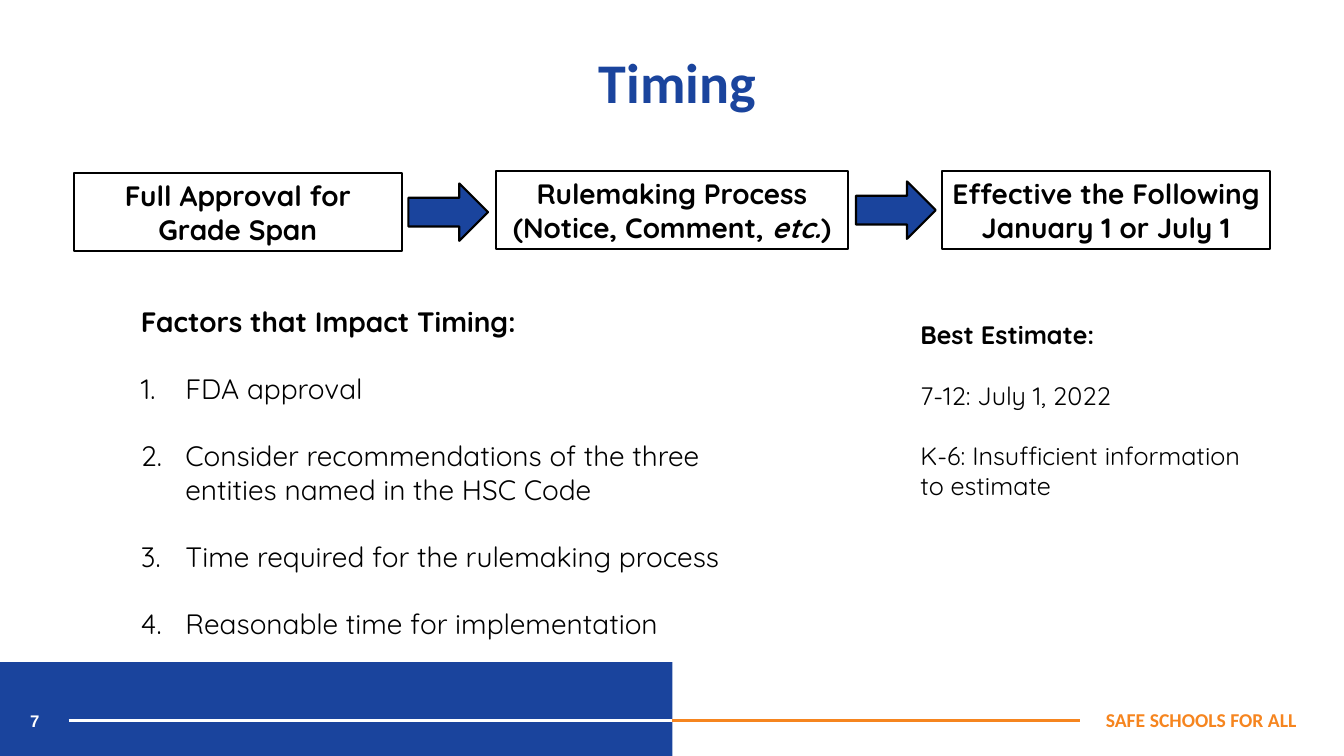
from lxml import etree
from pptx import Presentation
from pptx.dml.color import RGBColor
from pptx.enum import shapes, text
from pptx.oxml import ns
from pptx.util import Inches, Pt

BLUE = RGBColor(0x1A, 0x44, 0x9D)
ORANGE = RGBColor(0xF6, 0x85, 0x1F)
BLACK = RGBColor(0, 0, 0)
WHITE = RGBColor(255, 255, 255)
LEFT, CENTER, RIGHT = text.PP_ALIGN.LEFT, text.PP_ALIGN.CENTER, text.PP_ALIGN.RIGHT

deck = Presentation()
deck.slide_width, deck.slide_height = Inches(13.33), Inches(7.5)
page = deck.slides.add_slide(deck.slide_layouts[6])


def add_block(kind, left, top, width, height, fill=None, outline=None):
    block = page.shapes.add_shape(kind, Inches(left), Inches(top), Inches(width), Inches(height))
    block.shadow.inherit = False
    if fill is None:
        block.fill.background()
    else:
        block.fill.solid()
        block.fill.fore_color.rgb = fill
    if outline is None:
        block.line.fill.background()
    else:
        block.line.color.rgb = outline
        block.line.width = Pt(1.5)
    return block


def add_text(left, top, width, height, lines, size, font, color, align=LEFT, gap=0):
    """Add a text box whose first paragraph is bold; return its text frame."""
    box = page.shapes.add_textbox(Inches(left), Inches(top), Inches(width), Inches(height))
    frame = box.text_frame
    frame.word_wrap = True
    for index, line in enumerate(lines):
        para = frame.paragraphs[0] if index == 0 else frame.add_paragraph()
        para.text = line
        para.alignment = align
        para.space_before = Pt(gap if index else 0)
        para.font.size, para.font.name = Pt(size), font
        para.font.color.rgb = color
        para.font.bold = index == 0
    return frame


# Footer: band, page number, rules and motto
add_block(shapes.MSO_SHAPE.RECTANGLE, 0, 6.57, 6.67, 0.93, fill=BLUE)
number = add_text(0.2, 6.95, 0.95, 0.4, ["7"], 12, "Arial", WHITE)
number.vertical_anchor = text.MSO_ANCHOR.MIDDLE
for start, end, color in [(0.68, 10.54, WHITE), (6.67, 10.71, ORANGE)]:
    rule = page.shapes.add_connector(
        shapes.MSO_CONNECTOR.STRAIGHT, Inches(start), Inches(7.15), Inches(end), Inches(7.15))
    rule.line.color.rgb = color
    rule.line.width = Pt(2.25)
    etree.SubElement(rule.element.spPr, ns.qn("a:effectLst"))
add_text(10.11, 6.97, 2.85, 0.34, ["SAFE SCHOOLS FOR ALL"], 14, "Calibri", ORANGE, RIGHT)

# Title
add_text(0.96, 0.42, 11.52, 0.77, ["Timing"], 40, "Calibri", BLUE, CENTER)

# Process steps; each step is a list of (words, italic)
steps = [
    (0.73, 1.72, 3.26, [("Full Approval for Grade Span", False)]),
    (4.92, 1.7, 3.49, [("Rulemaking Process (Notice, Comment, ", False), ("etc.", True), (")", False)]),
    (9.34, 1.7, 3.26, [("Effective the Following January 1 or July 1", False)]),
]
for left, top, width, spans in steps:
    step = add_block(shapes.MSO_SHAPE.RECTANGLE, left, top, width, 0.77, outline=BLACK)
    step.text_frame.word_wrap = True
    para = step.text_frame.paragraphs[0]
    para.alignment = CENTER
    para.font.size, para.font.name, para.font.bold = Pt(20), "Quicksand", True
    para.font.color.rgb = BLACK
    for words, italic in spans:
        span = para.add_run()
        span.text = words
        span.font.italic = italic

# Arrows between the steps
for left, top in [(4.05, 1.82), (8.49, 1.8)]:
    add_block(shapes.MSO_SHAPE.RIGHT_ARROW, left, top, 0.79, 0.57, fill=BLUE, outline=BLACK)

# Numbered factors
factors = add_text(1.3, 2.97, 6.31, 3.47, [
    "Factors that Impact Timing:",
    "FDA approval",
    "Consider recommendations of the three entities named in the HSC Code",
    "Time required for the rulemaking process",
    "Reasonable time for implementation",
], 20, "Quicksand", BLACK, gap=24)
for para in factors.paragraphs[1:]:
    settings = para._p.get_or_add_pPr()
    settings.set("marL", str(Inches(0.44)))
    settings.set("indent", str(-Inches(0.44)))
    numbering = etree.Element(ns.qn("a:buAutoNum"), type="arabicPeriod")
    settings.find(ns.qn("a:defRPr")).addprevious(numbering)

# Best estimate
add_text(9.03, 3.12, 3.57, 1.92, [
    "Best Estimate:",
    "7-12: July 1, 2022",
    "K-6: Insufficient information to estimate",
], 18, "Quicksand", BLACK, gap=21.6)

deck.save("out.pptx")
